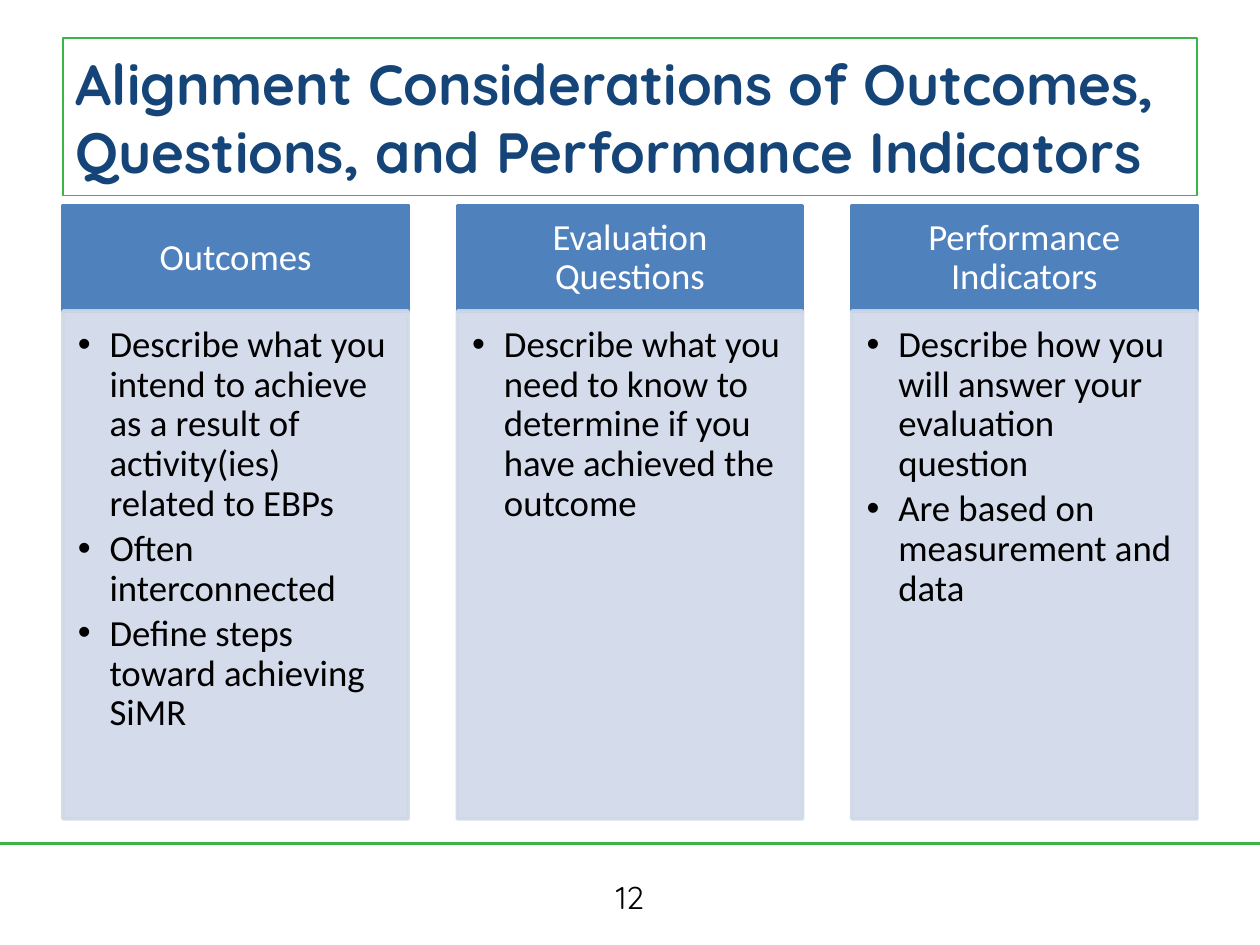
import dataclasses

import pptx
import pptx.dml.color
import pptx.enum.shapes
import pptx.enum.text
import pptx.oxml.ns
import pptx.util
from lxml import etree

Cm, Pt = pptx.util.Cm, pptx.util.Pt
ALIGN, ANCHOR = pptx.enum.text.PP_ALIGN, pptx.enum.text.MSO_ANCHOR
qn = pptx.oxml.ns.qn


@dataclasses.dataclass(frozen=True)
class Theme:
    green: str = "39B54A"
    navy: str = "154578"
    blue: str = "4F81BD"
    pale: str = "D0D8E8"
    white: str = "FFFFFF"
    black: str = "000000"
    brand_font: str = "Quicksand"
    body_font: str = "Calibri"
    title_size: float = 32.4
    body_size: float = 21
    number_size: float = 18


THEME = Theme()
COLUMNS = [
    ("Outcomes", [
        "Describe what you intend to achieve as a result of activity(ies) related to EBPs",
        "Often interconnected",
        "Define steps toward achieving SiMR",
    ]),
    ("Evaluation Questions", [
        "Describe what you need to know to determine if you have achieved the outcome",
    ]),
    ("Performance Indicators", [
        "Describe how you will answer your evaluation question",
        "Are based on measurement and data",
    ]),
]


def rgb(value):
    return pptx.dml.color.RGBColor.from_string(value)


def style_font(paragraph, face, size, color, bold=False):
    for run in paragraph.runs:
        run.font.name = face
        run.font.size = Pt(size)
        run.font.color.rgb = rgb(color)
        run.font.bold = bold


def set_margins(frame, left, top, right, bottom):
    frame.margin_left, frame.margin_top = Cm(left), Cm(top)
    frame.margin_right, frame.margin_bottom = Cm(right), Cm(bottom)


def make_translucent(shape, percent):
    for color in shape.fill._xPr.iter(qn("a:srgbClr")):
        etree.SubElement(color, qn("a:alpha"), val=str(percent * 1000))


def add_panel(slide, box, color):
    panel = slide.shapes.add_shape(
        pptx.enum.shapes.MSO_SHAPE.RECTANGLE, *map(Cm, box))
    panel.shadow.inherit = False
    panel.fill.solid()
    panel.fill.fore_color.rgb = rgb(color)
    panel.line.color.rgb = rgb(color)
    panel.line.width = Pt(2)
    panel.text_frame.word_wrap = True
    return panel


def add_bullet(paragraph):
    properties = paragraph._p.get_or_add_pPr()
    properties.set("marL", str(Cm(0.64)))
    properties.set("indent", str(Cm(-0.64)))
    etree.SubElement(properties, qn("a:buFont"), typeface="Arial")
    etree.SubElement(properties, qn("a:buChar"), char="•")


def place_title(slide, box, text):
    title = slide.shapes.title
    title.left, title.top, title.width, title.height = map(Cm, box)
    title.line.color.rgb = rgb(THEME.green)
    title.line.width = Pt(1)
    frame = title.text_frame
    frame.text = text
    frame.word_wrap = True
    frame.auto_size = pptx.enum.text.MSO_AUTO_SIZE.NONE
    frame.vertical_anchor = ANCHOR.MIDDLE
    heading = frame.paragraphs[0]
    heading.alignment = ALIGN.LEFT
    style_font(heading, THEME.brand_font, THEME.title_size, THEME.navy, bold=True)


def add_column(slide, box, heading, points):
    left, top, width, height = box
    header_height = 2.13

    header = add_panel(slide, (left, top, width, header_height), THEME.blue)
    frame = header.text_frame
    set_margins(frame, 0.41, 0.23, 0.41, 0.23)
    frame.vertical_anchor = ANCHOR.MIDDLE
    frame.text = heading
    label = frame.paragraphs[0]
    label.alignment = ALIGN.CENTER
    label.line_spacing = 0.9
    style_font(label, THEME.body_font, THEME.body_size, THEME.white)

    body = add_panel(
        slide, (left, top + header_height, width, height - header_height), THEME.pale)
    make_translucent(body, 90)
    for color in body.line._ln.iter(qn("a:srgbClr")):
        if color.find(qn("a:alpha")) is None:
            etree.SubElement(color, qn("a:alpha"), val="90000")
    frame = body.text_frame
    set_margins(frame, 0.3, 0.3, 0.41, 0.46)
    frame.vertical_anchor = ANCHOR.TOP
    frame.text = "\n".join(points)
    for point in frame.paragraphs:
        point.alignment = ALIGN.LEFT
        point.line_spacing = 0.9
        point.space_after = Pt(3.15)
        add_bullet(point)
        style_font(point, THEME.body_font, THEME.body_size, THEME.black)


def add_columns(slide, box, columns):
    """Spread the columns evenly over the width of the box."""
    left, top, width, height = box
    column_width = 6.96
    step = (width - column_width) / (len(columns) - 1)
    for index, (heading, points) in enumerate(columns):
        add_column(slide, (left + index * step, top, column_width, height),
                   heading, points)


def add_footer(slide, box, number):
    left, top, width, height = box
    rule = slide.shapes.add_connector(
        pptx.enum.shapes.MSO_CONNECTOR.STRAIGHT,
        Cm(left), Cm(top), Cm(left + width), Cm(top))
    rule.line.color.rgb = rgb(THEME.green)
    rule.line.width = Pt(1.5)
    etree.SubElement(rule._element.spPr, qn("a:effectLst"))

    number_width = 5.92
    page = slide.shapes.add_textbox(
        Cm(left + (width - number_width) / 2), Cm(top + 0.58),
        Cm(number_width), Cm(1.02))
    frame = page.text_frame
    frame.word_wrap = True
    frame.vertical_anchor = ANCHOR.MIDDLE
    frame.text = number
    frame.paragraphs[0].alignment = ALIGN.CENTER
    style_font(frame.paragraphs[0], THEME.brand_font, THEME.number_size, THEME.black)


def main():
    deck = pptx.Presentation()
    deck.slide_width, deck.slide_height = Cm(25.4), Cm(19.05)
    slide = deck.slides.add_slide(deck.slide_layouts.get_by_name("Title Only"))
    add_footer(slide, (0, 17, 25.4, 2.05), "12")
    place_title(slide, (1.27, 0.76, 22.86, 3.18),
                "Alignment Considerations of Outcomes, "
                "Questions, and Performance Indicators")
    add_columns(slide, (1.27, 4.14, 22.86, 12.37), COLUMNS)
    deck.save("out.pptx")


if __name__ == "__main__":
    main()
